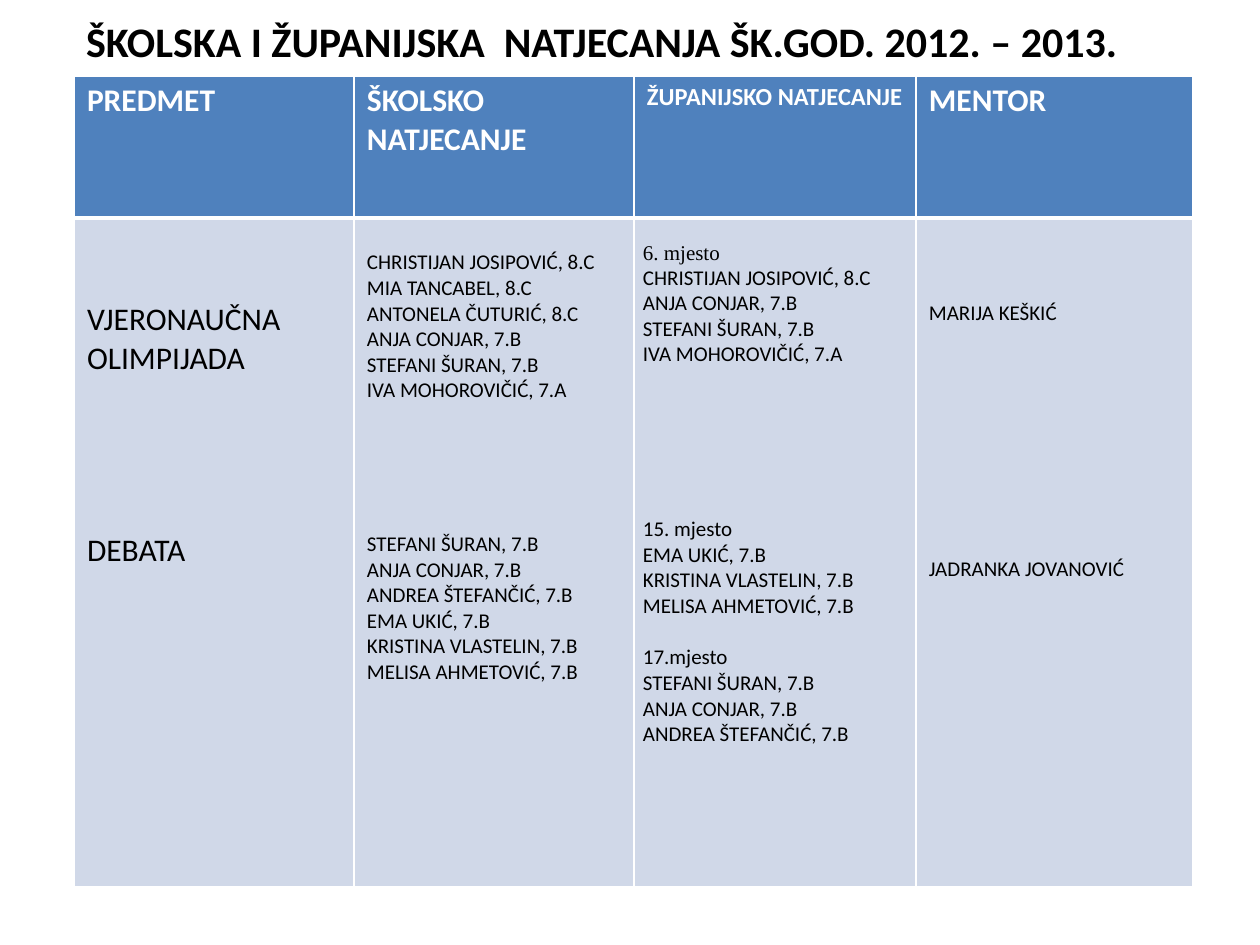
from lxml import etree
from pptx import Presentation
from pptx.dml.color import RGBColor
from pptx.enum.text import MSO_ANCHOR, PP_ALIGN
from pptx.oxml.ns import qn
from pptx.util import Emu, Pt

LEFT = PP_ALIGN.LEFT
MIDDLE = MSO_ANCHOR.MIDDLE
TITLE_ONLY = 5
SCALE = 914400 / 126

HEX = {"head": "4F81BD", "body": "D0D8E8", "light": "FFFFFF", "dark": "000000"}
SANS, SERIF = "Calibri", "Times New Roman"
TITLE = {"name": SANS, "size": Pt(24), "bold": True}
HEAD = {"name": SANS, "size": Pt(18), "bold": True}
SMALL = {**HEAD, "size": Pt(14)}
TOPIC = {"name": SANS, "size": Pt(18), "bold": False}
NAMES = {**TOPIC, "size": Pt(12)}
PLACE = {**NAMES, "name": SERIF}

COLS = [280, 280, 282, 277]
ROWS = [142, 669]
HEADS = [
    ("PREDMET", HEAD),
    ("ŠKOLSKO NATJECANJE", HEAD),
    ("ŽUPANIJSKO NATJECANJE", SMALL),
    ("MENTOR", HEAD),
]

# Each column: side inset, top inset, then blocks of (gap above, lines, format).
BODY = [
    (13, 83, [
        (0, ["VJERONAUČNA OLIMPIJADA"], TOPIC),
        (154, ["DEBATA"], TOPIC),
    ]),
    (13, 32, [
        (0, ["CHRISTIJAN JOSIPOVIĆ, 8.C", "MIA TANCABEL, 8.C",
             "ANTONELA ČUTURIĆ, 8.C", "ANJA CONJAR, 7.B",
             "STEFANI ŠURAN, 7.B", "IVA MOHOROVIČIĆ, 7.A"], NAMES),
        (128, ["STEFANI ŠURAN, 7.B", "ANJA CONJAR, 7.B",
               "ANDREA ŠTEFANČIĆ, 7.B", "EMA UKIĆ, 7.B",
               "KRISTINA VLASTELIN, 7.B", "MELISA AHMETOVIĆ, 7.B"], NAMES),
    ]),
    (9, 24, [
        (0, ["6. mjesto"], PLACE),
        (0, ["CHRISTIJAN JOSIPOVIĆ, 8.C", "ANJA CONJAR, 7.B",
             "STEFANI ŠURAN, 7.B", "IVA MOHOROVIČIĆ, 7.A"], NAMES),
        (149, ["15. mjesto", "EMA UKIĆ, 7.B",
               "KRISTINA VLASTELIN, 7.B", "MELISA AHMETOVIĆ, 7.B"], NAMES),
        (26, ["17.mjesto", "STEFANI ŠURAN, 7.B",
              "ANJA CONJAR, 7.B", "ANDREA ŠTEFANČIĆ, 7.B"], NAMES),
    ]),
    (13, 83, [
        (0, ["MARIJA KEŠKIĆ"], NAMES),
        (230, ["JADRANKA JOVANOVIĆ"], NAMES),
    ]),
]


def px(num):
    return Emu(round(num * SCALE))


def color(key):
    return RGBColor.from_string(HEX[key])


def apply(item, values):
    for key, value in values.items():
        setattr(item, key, value)


def write(para, text, style, tone):
    run = para.add_run()
    run.text = text
    apply(run.font, style)
    run.font.color.rgb = color(tone)


def edge(cell, widths):
    """Draw white cell borders; they must precede the fill in the XML."""
    props = cell._tc.get_or_add_tcPr()
    for spot, (side, width) in enumerate(widths.items()):
        line = etree.Element(qn(f"a:ln{side}"), w=str(Pt(width)))
        fill = etree.SubElement(line, qn("a:solidFill"))
        etree.SubElement(fill, qn("a:srgbClr"), val=HEX["light"])
        props.insert(spot, line)


def paint(cell, tone, widths, side=13, top=6):
    cell.fill.solid()
    cell.fill.fore_color.rgb = color(tone)
    edge(cell, widths)
    apply(cell, {"margin_left": px(side), "margin_right": px(side),
                 "margin_top": px(top)})


def fill_blocks(frame, blocks):
    """Write blocks of lines, with each gap as space above its first line."""
    para = None
    for gap, lines, style in blocks:
        for index, text in enumerate(lines):
            para = frame.add_paragraph() if para else frame.paragraphs[0]
            para.space_before = px(0 if index else gap)
            write(para, text, style, "dark")


def add_title(slide, text):
    title = slide.shapes.title
    apply(title, {"left": px(54), "top": px(-24),
                  "width": px(1171), "height": px(129)})
    frame = title.text_frame
    apply(frame, {"margin_left": px(32), "vertical_anchor": MIDDLE,
                  "word_wrap": True})
    para = frame.paragraphs[0]
    para.alignment = LEFT
    write(para, text, TITLE, "dark")


def add_grid(slide):
    frame = slide.shapes.add_table(
        len(ROWS), len(COLS), px(74), px(76), px(sum(COLS)), px(sum(ROWS)))
    table = frame.table
    for col, width in zip(table.columns, COLS):
        col.width = px(width)
    for row, height in zip(table.rows, ROWS):
        row.height = px(height)
    for index, (text, style) in enumerate(HEADS):
        cell = table.cell(0, index)
        paint(cell, "head", {"L": 1, "R": 1, "T": 1, "B": 3})
        write(cell.text_frame.paragraphs[0], text, style, "light")
    for index, (side, top, blocks) in enumerate(BODY):
        cell = table.cell(1, index)
        paint(cell, "body", {"L": 1, "R": 1, "T": 3, "B": 1}, side, top)
        fill_blocks(cell.text_frame, blocks)


def main():
    deck = Presentation()
    apply(deck, {"slide_width": px(1260), "slide_height": px(945)})
    slide = deck.slides.add_slide(deck.slide_layouts[TITLE_ONLY])
    add_title(slide, "ŠKOLSKA I ŽUPANIJSKA  NATJECANJA ŠK.GOD. 2012. – 2013.")
    add_grid(slide)
    deck.save("out.pptx")


if __name__ == "__main__":
    main()
